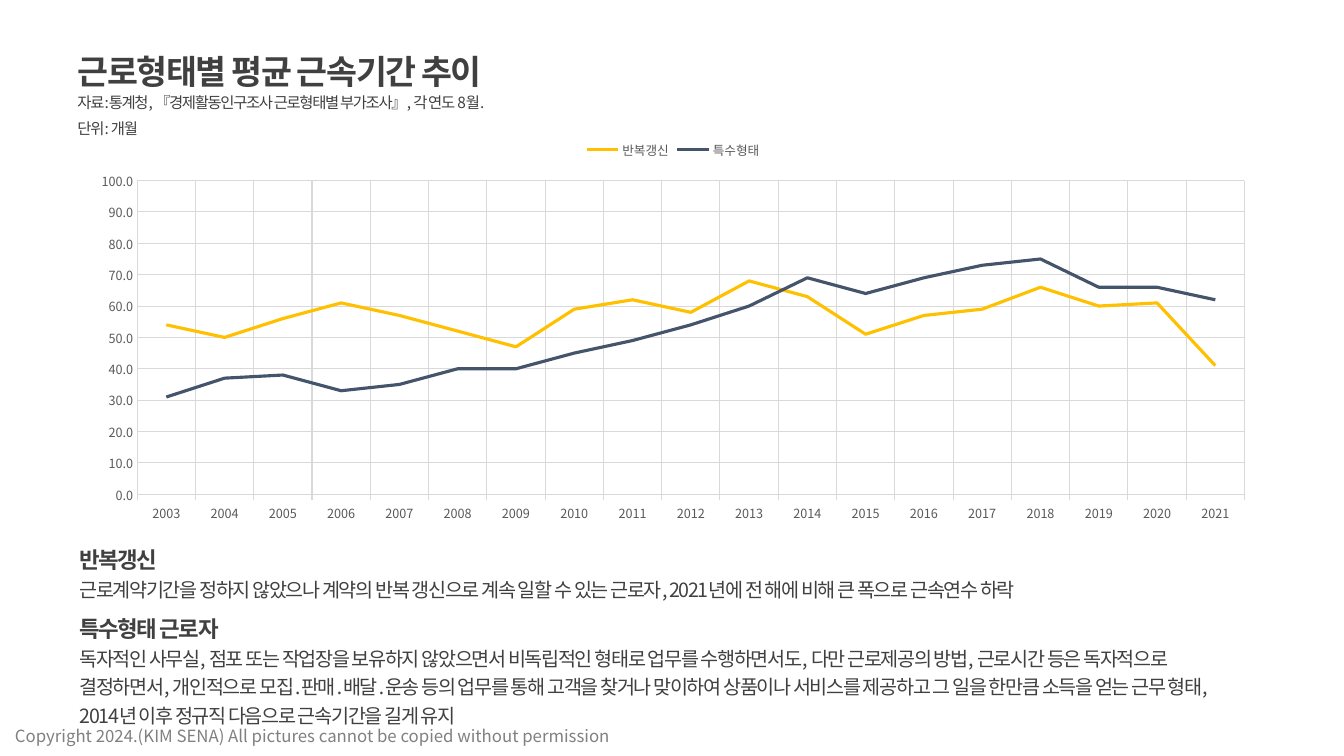
from copy import deepcopy

from lxml import etree
from pptx import Presentation
from pptx import util as u
from pptx.chart.data import CategoryChartData
from pptx.dml.color import RGBColor
from pptx.enum import chart as ch, text
from pptx.oxml.ns import qn

FONT = "Noto Sans CJK KR"
DARK, GRID, LABEL = "404040", "D9D9D9", "595959"
YEARS = [str(year) for year in range(2003, 2022)]
SERIES = [
    ("반복갱신", "FFC000",
     [54, 50, 56, 61, 57, 52, 47, 59, 62, 58, 68, 63, 51, 57, 59, 66, 60, 61, 41]),
    ("특수형태", "44546A",
     [31, 37, 38, 33, 35, 40, 40, 45, 49, 54, 60, 69, 64, 69, 73, 75, 66, 66, 62]),
]
NOTES = [
    ("반복갱신",
     "근로계약기간을 정하지 않았으나 계약의 반복 갱신으로 계속 일할 수 있는 근로자, "
     "2021년에 전 해에 비해 큰 폭으로 근속연수 하락"),
    ("특수형태 근로자",
     "독자적인 사무실, 점포 또는 작업장을 보유하지 않았으면서 비독립적인 형태로 업무를 "
     "수행하면서도, 다만 근로제공의 방법, 근로시간 등은 독자적으로 결정하면서, 개인적으로 "
     "모집․판매․배달․운송 등의 업무를 통해 고객을 찾거나 맞이하여 상품이나 서비스를 "
     "제공하고 그 일을 한만큼 소득을 얻는 근무 형태, 2014년 이후 정규직 다음으로 "
     "근속기간을 길게 유지"),
]


def rgb(value):
    """Turn a hex string into a colour."""
    return RGBColor.from_string(value)


def inches(*box):
    """Turn numbers into lengths."""
    return [u.Inches(v) for v in box]


def style(font, size, color, bold=False, spacing=0):
    """Set Latin and East Asian typeface, size, colour and letter spacing."""
    font.name, font.size, font.bold = FONT, u.Pt(size), bold
    font.color.rgb = rgb(color)
    rpr = font._rPr
    rpr.find(qn("a:latin")).addnext(etree.Element(qn("a:ea"), typeface=FONT))
    if spacing:
        rpr.set("spc", str(spacing * 100))


def add_run(p, words, size, color=DARK, bold=False, spacing=-1):
    """Append a styled run to a paragraph."""
    r = p.add_run()
    r.text = words
    style(r.font, size, color, bold, spacing)
    return r


def prepare(sp):
    """Make a text frame wrap, start at the top and grow with its text."""
    tf = sp.text_frame
    tf.word_wrap = True
    tf.auto_size = text.MSO_AUTO_SIZE.SHAPE_TO_FIT_TEXT
    tf.vertical_anchor = text.MSO_ANCHOR.TOP
    return tf


def add_line(s, box, words, size, color=DARK, spacing=-1):
    """Add a text box with one line of text."""
    tf = prepare(s.shapes.add_textbox(*inches(*box)))
    add_run(tf.paragraphs[0], words, size, color, spacing=spacing)


def add_heading(s, left, top, width):
    """Place the title with its source and unit lines."""
    title = s.shapes.title
    title.left, title.top, title.width, title.height = inches(left, top, width, 0.5)
    p = prepare(title).paragraphs[0]
    p.alignment = text.PP_ALIGN.LEFT
    add_run(p, "근로형태별 평균 근속기간 추이", 24, bold=True)
    add_line(s, (left, top + 0.42, width, 0.29),
             "자료:통계청, 『경제활동인구조사 근로형태별 부가조사』, 각 연도 8월.", 11)
    add_line(s, (left, top + 0.68, 0.91, 0.29), "단위: 개월", 11)


def set_plot_area(chart, x, y, w, h):
    """Fix the inner plot area as fractions of the chart."""
    area = chart._chartSpace.chart.plotArea
    for old in area.findall(qn("c:layout")):
        area.remove(old)
    layout = etree.Element(qn("c:layout"))
    manual = etree.SubElement(layout, qn("c:manualLayout"))
    for tag, val in (("layoutTarget", "inner"), ("xMode", "edge"), ("yMode", "edge"),
                     ("x", x), ("y", y), ("w", w), ("h", h)):
        etree.SubElement(manual, qn(f"c:{tag}"), val=str(val))
    area.insert(0, layout)


def add_tenure_chart(s, box):
    """Draw the line chart of average tenure."""
    data = CategoryChartData(number_format="0.0")
    data.categories = YEARS
    for name, _, values in SERIES:
        data.add_series(name, values)
    chart = s.shapes.add_chart(ch.XL_CHART_TYPE.LINE, *inches(*box), data).chart
    style(chart.font, 10, "000000")
    chart.has_title = False
    chart.has_legend = True
    chart.legend.position = ch.XL_LEGEND_POSITION.TOP
    chart.legend.include_in_layout = False
    style(chart.legend.font, 9, LABEL)
    set_plot_area(chart, 0.05, 0.13, 0.93, 0.79)

    years, months = chart.category_axis, chart.value_axis
    for axis in (years, months):
        style(axis.tick_labels.font, 9, LABEL)
        axis.has_major_gridlines = True
        for line in (axis.major_gridlines.format.line, axis.format.line):
            line.color.rgb, line.width = rgb(GRID), u.Pt(0.75)
    years.major_tick_mark = ch.XL_TICK_MARK.OUTSIDE
    months.major_tick_mark = ch.XL_TICK_MARK.NONE
    months.format.line.fill.background()
    months.minimum_scale, months.maximum_scale, months.major_unit = 0, 100, 10
    months.tick_labels.number_format = "0.0"
    months.tick_labels.number_format_is_linked = False

    for series, (_, color, _) in zip(chart.plots[0].series, SERIES):
        series.smooth = False
        series.marker.style = ch.XL_MARKER_STYLE.NONE
        series.format.line.color.rgb = rgb(color)
        series.format.line.width = u.Pt(2.25)


def add_notes_text(s, box):
    """Explain each form of work under a bold heading."""
    tf = prepare(s.shapes.add_textbox(*inches(*box)))
    for i, (heading, body) in enumerate(NOTES):
        p = tf.add_paragraph() if i else tf.paragraphs[0]
        p.line_spacing = 1.2
        if i:
            p.space_before = u.Pt(6)
        r = add_run(p, heading, 16, bold=True)
        p.add_line_break()
        p._p.find(qn("a:br")).append(deepcopy(r.font._rPr))
        add_run(p, body, 14)


def main():
    """Build and save the slide."""
    prs = Presentation()
    prs.slide_width, prs.slide_height = inches(13.33, 7.5)
    s = prs.slides.add_slide(prs.slide_layouts[5])
    add_line(s, (0.05, 7.15, 6.15, 0.3),
             "Copyright 2024.(KIM SENA) All pictures cannot be copied without permission",
             12, "808080", 0)
    add_heading(s, 0.67, 0.45, 6.66)
    add_tenure_chart(s, (0.77, 1.28, 11.81, 3.94))
    add_notes_text(s, (0.69, 5.32, 11.71, 1.95))
    prs.save("out.pptx")


if __name__ == "__main__":
    main()
